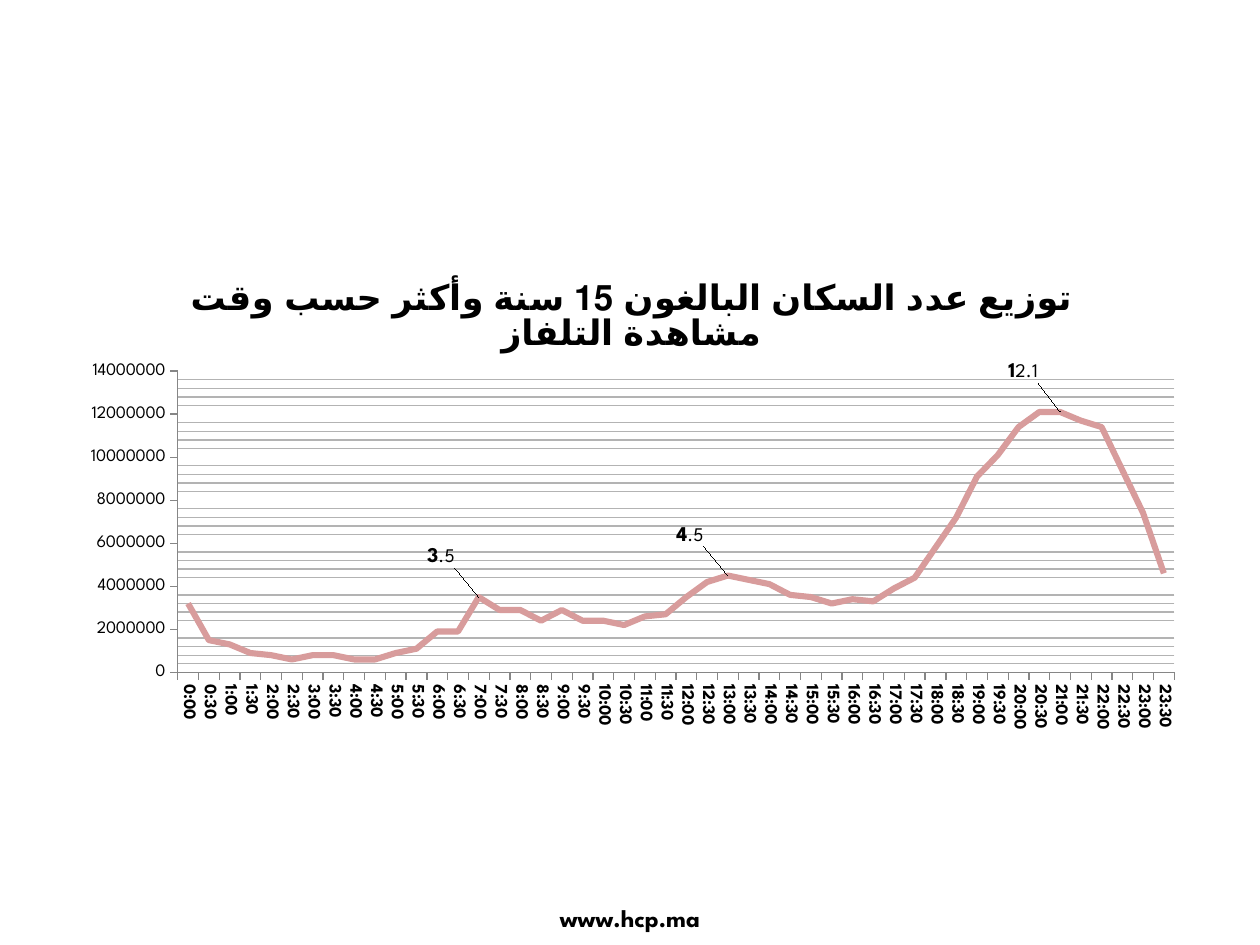
from dataclasses import dataclass

from lxml import etree
from pptx import Presentation, util as u
from pptx.chart.data import CategoryChartData
from pptx.dml.color import RGBColor
from pptx.enum import chart as charts, text
from pptx.oxml import ns, parse_xml


@dataclass(frozen=True)
class Theme:
    font: str = "League Spartan"
    ink: RGBColor = RGBColor(0x00, 0x00, 0x00)
    line: RGBColor = RGBColor(0xD8, 0x9C, 0x9C)
    axis: RGBColor = RGBColor(0x86, 0x86, 0x86)
    grid: RGBColor = RGBColor(0xB3, 0xB3, 0xB3)
    title_size: u.Length = u.Pt(20)
    footer_size: u.Length = u.Pt(14)
    peak_size: u.Length = u.Pt(12)
    peak_rest_size: u.Length = u.Pt(11)
    axis_size: u.Length = u.Pt(10)
    thin: u.Length = u.Pt(0.75)
    thick: u.Length = u.Pt(3.5)


@dataclass(frozen=True)
class Peak:
    slot: int
    lead: str
    rest: str


THEME = Theme()
TITLE = "توزيع عدد السكان البالغون 15 سنة وأكثر حسب وقت مشاهدة التلفاز"
PEAKS = (Peak(14, "3", ".5"), Peak(26, "4", ".5"), Peak(42, "1", "2.1"))
TIMES = [f"{hour}:{minute:02}" for hour in range(24) for minute in (0, 30)]
# Hundreds of thousands of viewers in each half hour
VIEWERS = (
    32, 15, 13, 9, 8, 6, 8, 8, 6, 6, 9, 11, 19, 19, 35, 29,
    29, 24, 29, 24, 24, 22, 26, 27, 35, 42, 45, 43, 41, 36, 35, 32,
    34, 33, 39, 44, 58, 72, 91, 101, 114, 121, 121, 117, 114, 94, 74, 46,
)


def style_font(font, size: u.Length, bold: bool) -> None:
    font.name = THEME.font
    font.size = size
    font.bold = bold
    font.color.rgb = THEME.ink


def manual_layout(*settings: tuple[str, object]) -> etree._Element:
    """Chart layout element; settings keep the order of the schema."""
    parts = "".join(f'<c:{name} val="{value}"/>' for name, value in settings)
    return parse_xml(
        f'<c:layout {ns.nsdecls("c")}><c:manualLayout>{parts}</c:manualLayout></c:layout>'
    )


def add_title(chart) -> None:
    chart.has_title = True
    chart.chart_title.include_in_layout = False
    para = chart.chart_title.text_frame.paragraphs[0]
    span = para.add_run()
    span.text = TITLE
    para.alignment = text.PP_ALIGN.CENTER
    para._p.get_or_add_pPr().set("rtl", "1")
    style_font(para.font, THEME.title_size, True)
    style_font(span.font, THEME.title_size, True)


def style_axis(axis, bold: bool) -> None:
    style_font(axis.tick_labels.font, THEME.axis_size, bold)
    axis.has_major_gridlines = False
    axis.major_tick_mark = charts.XL_TICK_MARK.OUTSIDE
    axis.minor_tick_mark = charts.XL_TICK_MARK.NONE
    axis.format.line.color.rgb = THEME.axis
    axis.format.line.width = THEME.thin


def add_minor_gridlines(axis) -> None:
    axis.has_minor_gridlines = True
    axis._element.find(ns.qn("c:minorGridlines")).append(parse_xml(
        f'<c:spPr {ns.nsdecls("c", "a")}><a:ln w="{THEME.thin}"><a:solidFill>'
        f'<a:srgbClr val="{THEME.grid}"/></a:solidFill></a:ln></c:spPr>'
    ))


def style_axes(chart) -> None:
    times, viewers = chart.category_axis, chart.value_axis
    style_axis(times, True)
    body = times._element.find(ns.qn("c:txPr")).find(ns.qn("a:bodyPr"))
    body.set("rot", "5400000")
    body.set("vert", "horz")
    style_axis(viewers, False)
    viewers.minimum_scale, viewers.maximum_scale = 0, 14_000_000
    viewers.major_unit, viewers.minor_unit = 2_000_000, 400_000
    add_minor_gridlines(viewers)


def label_peak(series, peak: Peak) -> None:
    label = series.points[peak.slot].data_label
    para = label.text_frame.paragraphs[0]
    for words, size, bold in (
        (peak.lead, THEME.peak_size, True),
        (peak.rest, THEME.peak_rest_size, False),
    ):
        span = para.add_run()
        span.text = words
        style_font(span.font, size, bold)
    label.position = charts.XL_LABEL_POSITION.RIGHT
    index = series._element.xpath(f"c:dLbls/c:dLbl/c:idx[@val='{peak.slot}']")[0]
    index.addnext(manual_layout(("x", -0.05), ("y", -0.08)))


def place_plot(chart) -> None:
    area = chart._chartSpace.chart.plotArea
    for old in area.findall(ns.qn("c:layout")):
        area.remove(old)
    area.insert(0, manual_layout(
        ("layoutTarget", "inner"), ("xMode", "edge"), ("yMode", "edge"),
        ("x", 0.1), ("y", 0.24), ("w", 0.88), ("h", 0.62),
    ))


def add_viewing_chart(page) -> None:
    data = CategoryChartData(number_format="General")
    data.categories = TIMES
    data.add_series("Series 1", [count * 100_000 for count in VIEWERS])
    chart = page.shapes.add_chart(
        charts.XL_CHART_TYPE.LINE,
        u.Cm(1.3), u.Cm(5.13), u.Cm(22.83), u.Cm(9.8), data,
    ).chart
    chart.has_legend = False
    style_font(chart.font, THEME.axis_size, False)
    add_title(chart)
    style_axes(chart)
    place_plot(chart)

    plot = chart.plots[0]
    plot.vary_by_categories = False
    series = plot.series[0]
    series.smooth = False
    series.marker.style = charts.XL_MARKER_STYLE.NONE
    series.format.line.color.rgb = THEME.line
    series.format.line.width = THEME.thick
    for peak in PEAKS:
        label_peak(series, peak)


def add_footer(page) -> None:
    box = page.shapes.add_textbox(u.Cm(9.7), u.Cm(18.08), u.Cm(6), u.Cm(0.84))
    box.text_frame.word_wrap = True
    para = box.text_frame.paragraphs[0]
    para.text = "www.hcp.ma"
    para.alignment = text.PP_ALIGN.CENTER
    style_font(para.font, THEME.footer_size, True)


def main() -> None:
    deck = Presentation()
    deck.slide_width, deck.slide_height = u.Cm(25.4), u.Cm(19.05)
    page = deck.slides.add_slide(deck.slide_layouts[6])
    add_footer(page)
    add_viewing_chart(page)
    deck.save("out.pptx")


if __name__ == "__main__":
    main()
